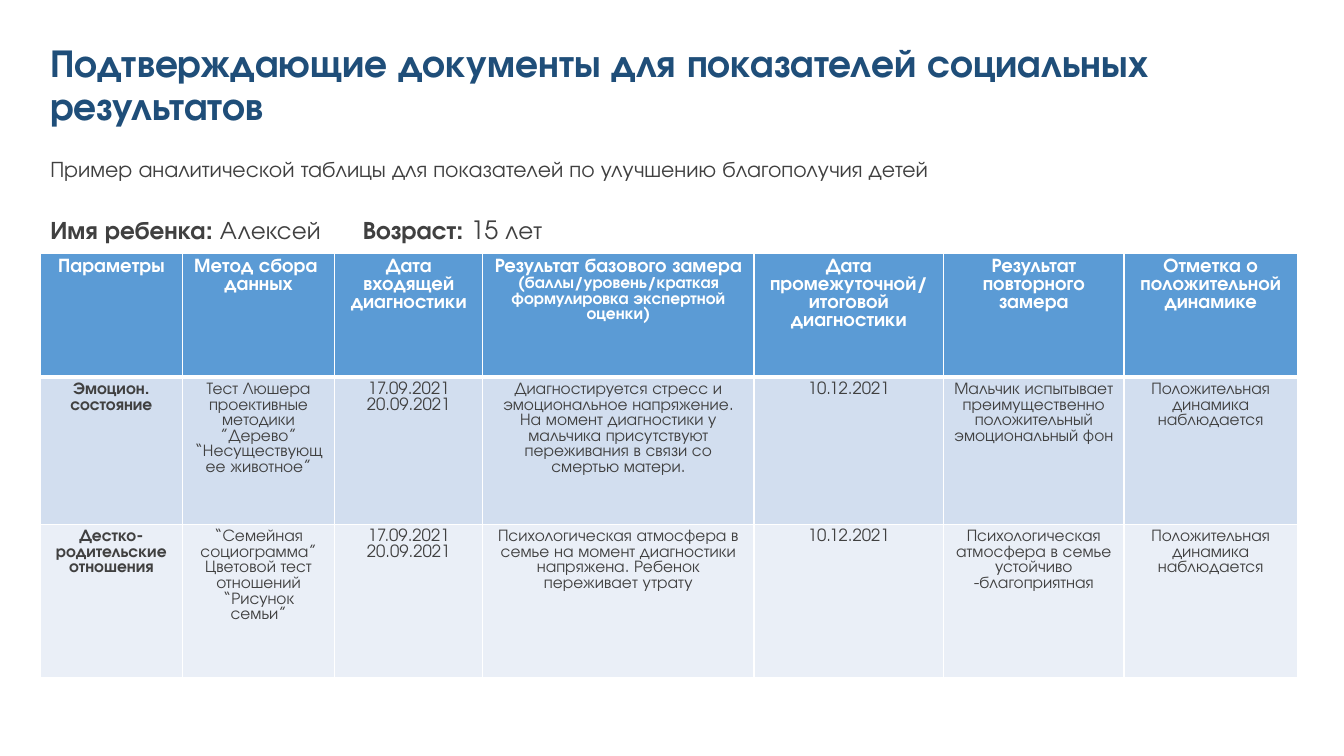
from dataclasses import dataclass

from lxml import etree
from pptx import Presentation
from pptx.dml.color import RGBColor
from pptx.enum.text import MSO_ANCHOR, PP_ALIGN
from pptx.oxml.ns import qn
from pptx.util import Inches, Pt

CENTER = PP_ALIGN.CENTER
TOP, MIDDLE = MSO_ANCHOR.TOP, MSO_ANCHOR.MIDDLE


@dataclass(frozen=True)
class Theme:
    font: str = "TeX Gyre Adventor"
    title: str = "1F4E79"
    body: str = "404040"
    white: str = "FFFFFF"
    header_fill: str = "5B9BD5"
    band_fills: tuple[str, ...] = ("D2DEEF", "EAEFF7")
    title_size: int = 28
    child_size: int = 18
    subtitle_size: int = 16
    header_size: int = 14
    cell_size: int = 12
    title_spacing: float = 0.9
    border: int = 1
    header_border: int = 3


THEME = Theme()


@dataclass(frozen=True)
class Span:
    text: str
    size: int
    color: str = THEME.body
    bold: bool = False


@dataclass(frozen=True)
class TextBlock:
    left: float
    top: float
    width: float
    height: float
    spans: tuple[Span, ...]
    anchor: MSO_ANCHOR = TOP
    spacing: float = 1.0
    tab: float | None = None


BLOCKS = (
    TextBlock(0.4, 0.4, 11.1, 0.91, (
        Span("Подтверждающие документы для показателей социальных результатов",
             THEME.title_size, THEME.title, True),
    ), MIDDLE, THEME.title_spacing),
    TextBlock(0.4, 1.49, 10.18, 0.37, (
        Span("Пример аналитической таблицы для показателей по улучшению благополучия детей",
             THEME.subtitle_size),
    )),
    TextBlock(0.4, 2.08, 5.49, 0.4, (
        Span("Имя ребенка: ", THEME.child_size, bold=True),
        Span("Алексей", THEME.child_size),
        Span("\tВозраст: ", THEME.child_size, bold=True),
        Span("15 лет", THEME.child_size),
    ), tab=3.1),
)

COLUMN_WIDTHS = (1.41, 1.51, 1.47, 2.69, 1.88, 1.79, 1.72)
ROW_HEIGHTS = (1.23, 1.46, 1.52)
DATES = "17.09.2021\n20.09.2021"
REPEAT_DATE = "10.12.2021"
PROGRESS = "Положительная динамика наблюдается"
BASE_RESULT_COLUMN = 3

# A line break separates the paragraphs of a cell.
ROWS = (
    ("Параметры", "Метод сбора \nданных", "Дата входящей диагностики",
     "Результат базового замера\n(баллы/уровень/краткая формулировка экспертной оценки)",
     "Дата промежуточной/ итоговой диагностики", "Результат повторного замера",
     "Отметка о положительной динамике"),
    ("Эмоцион. состояние",
     "Тест Люшера\nпроективные методики\n”Дерево” “Несуществующее животное”", DATES,
     "Диагностируется стресс и эмоциональное напряжение. На момент диагностики у мальчика "
     "присутствуют переживания в связи со смертью матери.",
     REPEAT_DATE, "Мальчик испытывает преимущественно положительный эмоциональный фон", PROGRESS),
    ("Дестко-родительские отношения",
     "“Семейная социограмма”\nЦветовой тест отношений\n“Рисунок семьи”", DATES,
     "Психологическая атмосфера в семье на момент диагностики напряжена. Ребенок переживает утрату",
     REPEAT_DATE, "Психологическая атмосфера в семье устойчиво -благоприятная", PROGRESS),
)


def add_span(paragraph, span: Span) -> None:
    run = paragraph.add_run()
    run.text = span.text
    formats = {"name": THEME.font, "size": Pt(span.size), "bold": span.bold}
    for attribute, value in formats.items():
        setattr(run.font, attribute, value)
    run.font.color.rgb = RGBColor.from_string(span.color)


def add_tab_stop(paragraph, position: float) -> None:
    stops = etree.SubElement(paragraph._p.get_or_add_pPr(), qn("a:tabLst"))
    etree.SubElement(stops, qn("a:tab"), pos=str(Inches(position)), algn="l")


def add_text_block(slide, block: TextBlock) -> None:
    frame = slide.shapes.add_textbox(
        Inches(block.left), Inches(block.top), Inches(block.width), Inches(block.height)
    ).text_frame
    formats = {"word_wrap": True, "vertical_anchor": block.anchor}
    for attribute, value in formats.items():
        setattr(frame, attribute, value)
    paragraph = frame.paragraphs[0]
    paragraph.line_spacing = block.spacing
    if block.tab is not None:
        add_tab_stop(paragraph, block.tab)
    for span in block.spans:
        add_span(paragraph, span)


def cell_span(text: str, row: int, column: int, line: int) -> Span:
    """Style one cell paragraph by its place in the table."""
    if row == 0:
        is_note = column == BASE_RESULT_COLUMN and line > 0
        size = THEME.cell_size if is_note else THEME.header_size
        return Span(text, size, THEME.white, True)
    return Span(text, THEME.cell_size, bold=column == 0)


def add_borders(cell, row: int) -> None:
    """Rule the cell in white, with a heavier line between header and body."""
    widths = {
        "a:lnL": THEME.border,
        "a:lnR": THEME.border,
        "a:lnT": THEME.header_border if row == 1 else THEME.border,
        "a:lnB": THEME.header_border if row == 0 else THEME.border,
    }
    properties = cell._tc.get_or_add_tcPr()
    for tag, width in widths.items():
        border = etree.SubElement(properties, qn(tag), w=str(Pt(width)))
        paint = etree.SubElement(border, qn("a:solidFill"))
        etree.SubElement(paint, qn("a:srgbClr"), val=THEME.white)


def fill_cell(cell, text: str, row: int, column: int) -> None:
    add_borders(cell, row)
    fill_color = THEME.band_fills[row - 1] if row else THEME.header_fill
    cell.fill.solid()
    cell.fill.fore_color.rgb = RGBColor.from_string(fill_color)
    for line, words in enumerate(text.split("\n")):
        frame = cell.text_frame
        paragraph = frame.add_paragraph() if line else frame.paragraphs[0]
        paragraph.alignment = CENTER
        add_span(paragraph, cell_span(words, row, column, line))


def add_results_table(slide) -> None:
    table = slide.shapes.add_table(
        len(ROWS), len(COLUMN_WIDTHS), Inches(0.4), Inches(2.51),
        Inches(sum(COLUMN_WIDTHS)), Inches(sum(ROW_HEIGHTS)),
    ).table
    for column, width in zip(table.columns, COLUMN_WIDTHS):
        column.width = Inches(width)
    for table_row, height in zip(table.rows, ROW_HEIGHTS):
        table_row.height = Inches(height)
    for row, texts in enumerate(ROWS):
        for column, text in enumerate(texts):
            fill_cell(table.cell(row, column), text, row, column)


def main() -> None:
    presentation = Presentation()
    presentation.slide_width = Inches(13.33)
    presentation.slide_height = Inches(7.5)
    slide = presentation.slides.add_slide(presentation.slide_layouts[6])
    add_results_table(slide)
    for block in BLOCKS:
        add_text_block(slide, block)
    presentation.save("out.pptx")


if __name__ == "__main__":
    main()
